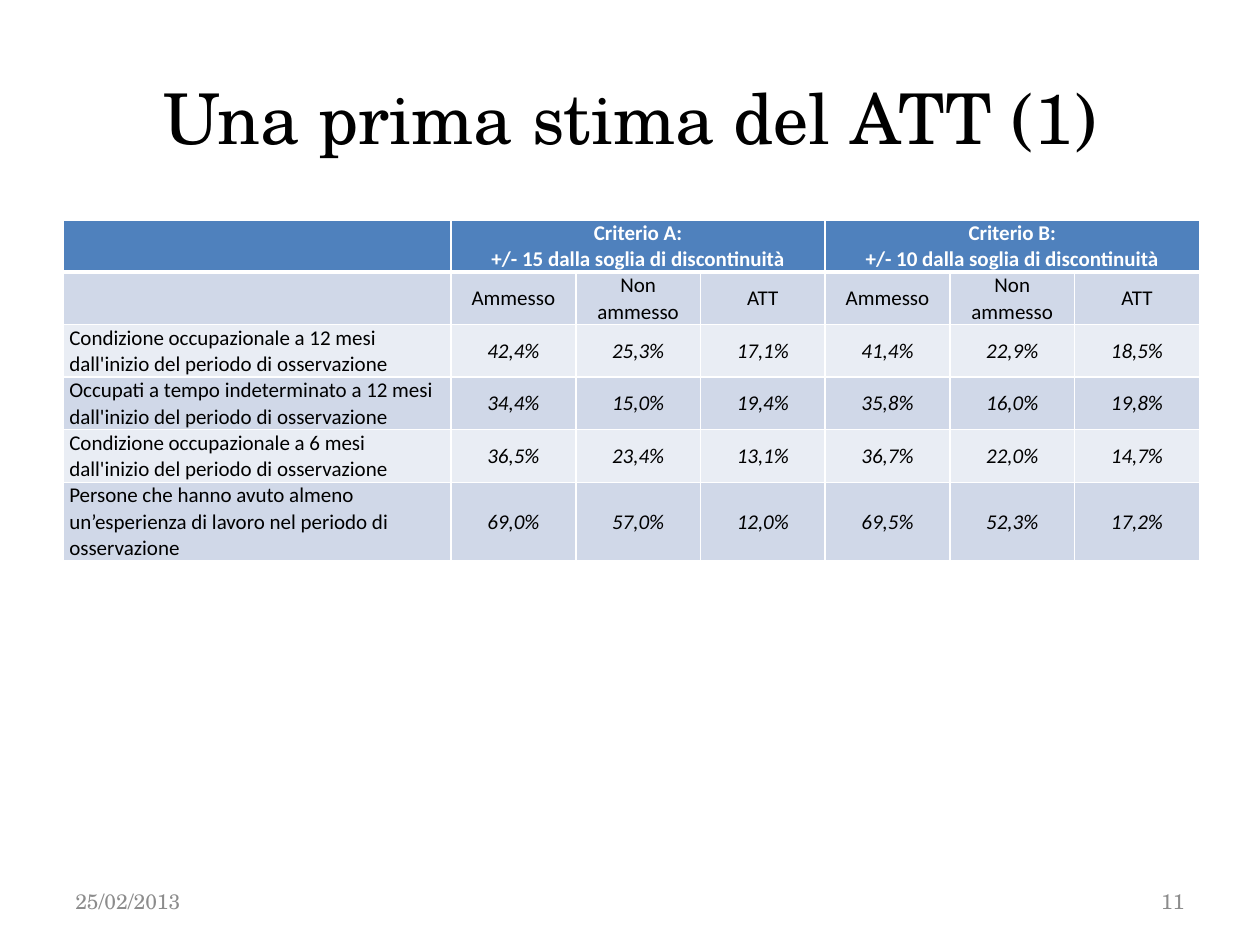
from lxml import etree
from pptx import Presentation
from pptx.dml.color import RGBColor
from pptx.enum.text import MSO_ANCHOR, PP_ALIGN
from pptx.oxml.ns import qn
from pptx.util import Inches, Pt

LEFT, CENTER, RIGHT = PP_ALIGN.LEFT, PP_ALIGN.CENTER, PP_ALIGN.RIGHT
MIDDLE = MSO_ANCHOR.MIDDLE

COLORS = {"header": "4F81BD", "dark": "D0D8E8", "light": "E9EDF4",
          "white": "FFFFFF", "black": "000000", "grey": "8C8C8C"}
SERIF, SANS = "TeX Gyre Schola", "Calibri"

TITLE = "Una prima stima del ATT (1)"
CRITERIA = ["Criterio A:\n+/- 15 dalla soglia di discontinuità",
            "Criterio B:\n+/- 10 dalla soglia di discontinuità"]
MEASURES = ["Ammesso", "Non\nammesso", "ATT"]
OUTCOMES = [
    ("Condizione occupazionale a 12 mesi dall'inizio del periodo di osservazione",
     "42,4%", "25,3%", "17,1%", "41,4%", "22,9%", "18,5%"),
    ("Occupati a tempo indeterminato a 12 mesi dall'inizio del periodo di osservazione",
     "34,4%", "15,0%", "19,4%", "35,8%", "16,0%", "19,8%"),
    ("Condizione occupazionale a 6 mesi dall'inizio del periodo di osservazione",
     "36,5%", "23,4%", "13,1%", "36,7%", "22,0%", "14,7%"),
    ("Persone che hanno avuto almeno un’esperienza di lavoro nel periodo di osservazione",
     "69,0%", "57,0%", "12,0%", "69,5%", "52,3%", "17,2%"),
]
FOOTERS = [("25/02/2013", 0.5, LEFT), ("11", 7.17, RIGHT)]
COLUMN_WIDTHS = [3.08] + [0.99] * 6
ROW_HEIGHTS = [0.41, 0.41, 0.41, 0.41, 0.38, 0.41]


def write(frame, text, align, color, spacing=None, **formats):
    frame.text = text
    for para in frame.paragraphs:
        para.alignment = align
        if spacing:
            para.line_spacing = spacing
        para.font.color.rgb = RGBColor.from_string(COLORS[color])
        for name, value in formats.items():
            setattr(para.font, name, value)


def add_borders(cell, bottom):
    """Draw white cell borders; only the bottom width (points) varies."""
    properties = cell._tc.get_or_add_tcPr()
    for index, (side, width) in enumerate(
            [("lnL", 1), ("lnR", 1), ("lnT", 1), ("lnB", bottom)]):
        line = etree.Element(qn(f"a:{side}"), w=str(Pt(width)))
        fill = etree.SubElement(line, qn("a:solidFill"))
        etree.SubElement(fill, qn("a:srgbClr"), val=COLORS["white"])
        properties.insert(index, line)


def fill_cell(cell, text, row, column):
    is_header = row == 0
    fill = "header" if is_header else "dark" if row % 2 else "light"
    cell.fill.solid()
    cell.fill.fore_color.rgb = RGBColor.from_string(COLORS[fill])
    add_borders(cell, 3 if is_header else 1)
    cell.vertical_anchor = MIDDLE
    cell.margin_left = cell.margin_right = Inches(0 if is_header else 0.05)
    cell.margin_top = cell.margin_bottom = 0
    write(cell.text_frame, text, CENTER if column or row < 2 else LEFT,
          "white" if is_header else "black", None if is_header else Pt(15),
          size=Pt(12), name=SANS, bold=is_header, italic=row > 1 and column > 0)


def add_results_table(page):
    group = len(MEASURES)
    header = [""]
    for criterion in CRITERIA:
        header += [criterion] + [""] * (group - 1)
    rows = [header, [""] + MEASURES * len(CRITERIA), *OUTCOMES]
    table = page.shapes.add_table(
        len(rows), len(header), Inches(0.5), Inches(1.75),
        Inches(sum(COLUMN_WIDTHS)), Inches(sum(ROW_HEIGHTS))).table
    for column, width in zip(table.columns, COLUMN_WIDTHS):
        column.width = Inches(width)
    for row, height in zip(table.rows, ROW_HEIGHTS):
        row.height = Inches(height)
    for r, texts in enumerate(rows):
        for c, text in enumerate(texts):
            fill_cell(table.cell(r, c), text, r, c)
    for start in range(1, len(header), group):
        table.cell(0, start).merge(table.cell(0, start + group - 1))


def main():
    deck = Presentation()
    deck.slide_width, deck.slide_height = Inches(10), Inches(7.5)
    page = deck.slides.add_slide(deck.slide_layouts[5])

    title = page.shapes.title
    title.left, title.top = Inches(0.5), Inches(0.3)
    title.width, title.height = Inches(9), Inches(1.25)
    title.text_frame.vertical_anchor = MIDDLE
    write(title.text_frame, TITLE, CENTER, "black", size=Pt(40), name=SERIF)

    add_results_table(page)

    for text, left, align in FOOTERS:
        box = page.shapes.add_textbox(Inches(left), Inches(6.95), Inches(2.33), Inches(0.4))
        box.text_frame.word_wrap = True
        box.text_frame.vertical_anchor = MIDDLE
        write(box.text_frame, text, align, "grey", size=Pt(12), name=SERIF)

    deck.save("out.pptx")


if __name__ == "__main__":
    main()
